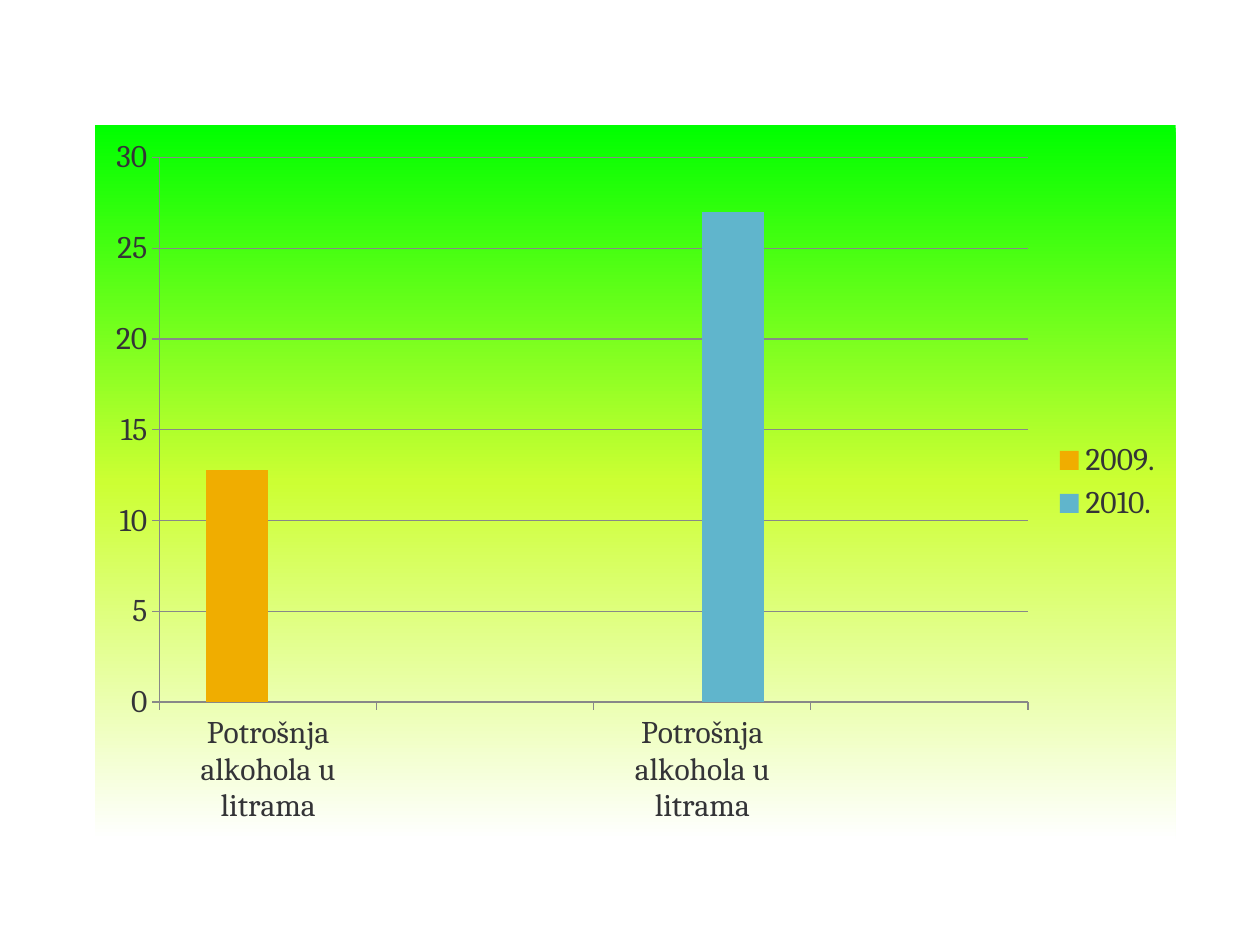
from lxml import etree
from pptx import Presentation
from pptx.chart.data import CategoryChartData
from pptx.dml.color import RGBColor
from pptx.enum.chart import XL_CHART_TYPE as ChartType
from pptx.enum.chart import XL_LEGEND_POSITION as LegendPosition
from pptx.enum.chart import XL_TICK_MARK as TickMark
from pptx.oxml import parse_xml
from pptx.oxml.ns import nsdecls, qn
from pptx.util import Inches, Pt

TEXT = RGBColor(0x34, 0x34, 0x37)
LINE = RGBColor(0x88, 0x88, 0x88)
ORANGE = RGBColor(0xF0, 0xAD, 0x00)
BLUE = RGBColor(0x60, 0xB5, 0xCC)
GREEN = RGBColor(0x00, 0xFF, 0x00)
LIME = RGBColor(0xCC, 0xFF, 0x33)
WHITE = RGBColor(0xFF, 0xFF, 0xFF)

presentation = Presentation()
presentation.slide_width = Inches(10)
presentation.slide_height = Inches(7.5)
slide = presentation.slides.add_slide(presentation.slide_layouts[6])

# Consumption chart
consumption = "Potrošnja alkohola u litrama"
chart_data = CategoryChartData()
chart_data.categories = [consumption, "", consumption, ""]
chart_data.add_series("2009.", [12.8, None, None, None])
chart_data.add_series("2010.", [None, None, 27, None])
chart = slide.shapes.add_chart(
    ChartType.COLUMN_CLUSTERED,
    Inches(0.75), Inches(0.99), Inches(8.58), Inches(5.67), chart_data,
).chart
chart.has_title = False
chart.font.size = Pt(18)
chart.font.name = "Cambria"
chart.font.color.rgb = TEXT

plot = chart.plots[0]
plot.gap_width = 150
plot.overlap = 0
plot.vary_by_categories = False
for series, color in zip(plot.series, (ORANGE, BLUE)):
    series.format.fill.solid()
    series.format.fill.fore_color.rgb = color

# Axes and legend
value_axis = chart.value_axis
value_axis.minimum_scale = 0
value_axis.maximum_scale = 30
value_axis.major_unit = 5
value_axis.has_major_gridlines = True
for axis in (chart.category_axis, value_axis):
    axis.major_tick_mark = TickMark.OUTSIDE
    axis.minor_tick_mark = TickMark.NONE
    axis.format.line.color.rgb = LINE
    axis.format.line.width = Pt(0.75)
value_axis.major_gridlines.format.line.color.rgb = LINE
value_axis.major_gridlines.format.line.width = Pt(0.75)

chart.has_legend = True
chart.legend.position = LegendPosition.RIGHT
chart.legend.include_in_layout = False

# Gradient behind the whole chart, running from top to bottom
chart_format = parse_xml(
    f'<c:spPr {nsdecls("c", "a")}><a:gradFill><a:gsLst/>'
    '<a:lin ang="5400000" scaled="0"/></a:gradFill>'
    '<a:ln><a:noFill/></a:ln></c:spPr>'
)
stops = chart_format.find(".//" + qn("a:gsLst"))
for percent, color in ((0, GREEN), (50, LIME), (100, WHITE)):
    stop = etree.SubElement(stops, qn("a:gs"), pos=str(percent * 1000))
    etree.SubElement(stop, qn("a:srgbClr"), val=str(color))
chart.element.find(qn("c:chart")).addnext(chart_format)

presentation.save("out.pptx")
